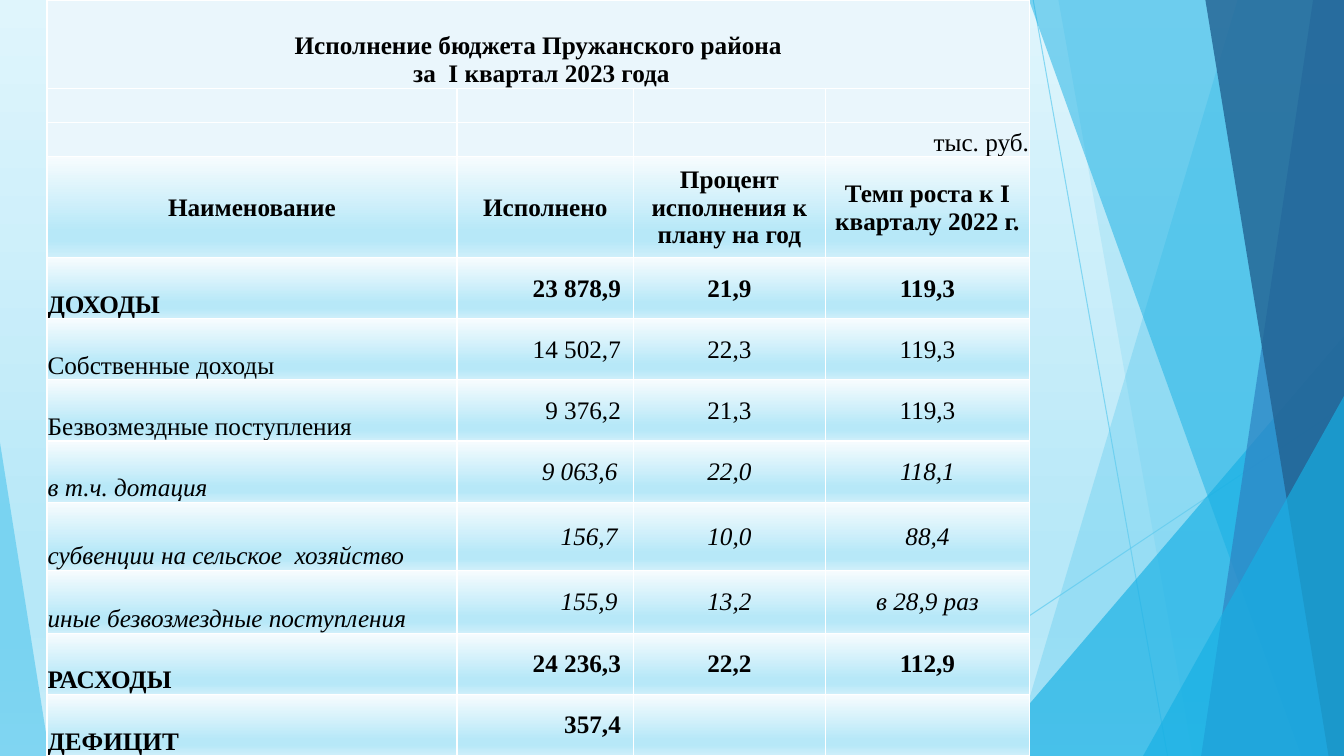
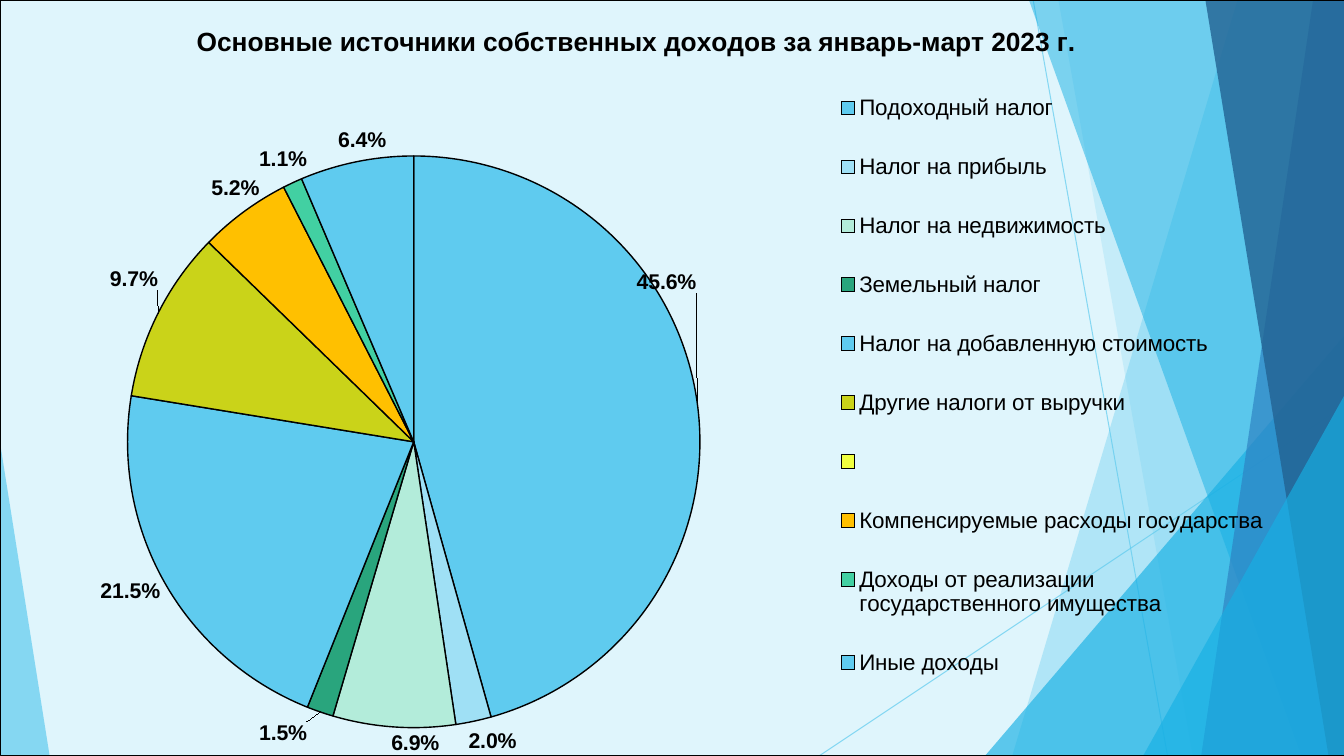
from copy import deepcopy

from lxml.etree import SubElement
from pptx import Presentation
from pptx.chart.data import CategoryChartData
from pptx.dml.color import RGBColor
from pptx.enum.chart import XL_CHART_TYPE, XL_LABEL_POSITION, XL_LEGEND_POSITION
from pptx.enum.shapes import MSO_CONNECTOR, MSO_SHAPE
from pptx.enum.text import MSO_ANCHOR, PP_ALIGN
from pptx.oxml import parse_xml
from pptx.oxml.ns import nsdecls, qn
from pptx.util import Pt

WIDTH, HEIGHT = 960, 540
BLACK, WHITE = "000000", "FFFFFF"
PALE, SKY, CYAN, BLUE, NAVY = "DFF5FC", "5FCBEF", "17B0E4", "2E83C3", "226292"
HEADING_FILL = "EAF6FC"
SHADE = [(74, "B7E8F8"), (83, "B7E8F8"), (100, "CFEFFA")]
SLIDE_GRADIENT = [(0, PALE)] + SHADE
CELL_GRADIENT = [(0, "F7FCFE")] + SHADE

LINES = [((738, 0), (834, HEIGHT)), ((WIDTH, 290), (585, HEIGHT))]
# Each facet runs from its top and bottom corner to the right edge: top, bottom, colour, opacity
BACK_FACETS = [(884, 723, SKY, 36), (756, 852, SKY, 20)]
FRONT_FACETS = [(735, 929.5, CYAN, 50), (938, 858, BLUE, 70), (861, 949, NAVY, 80)]

COLUMNS = [293, 126, 137, 146]
ROW_HEIGHTS = [63, 24.5, 24.5, 72] + [43.7] * 4 + [48.6, 45] + [43.7] * 2
HEADERS = ["Наименование", "Исполнено", "Процент исполнения к плану на год",
           "Темп роста к I кварталу 2022 г."]
BUDGET = [
    ("bold", "ДОХОДЫ", "23 878,9", "21,9", "119,3"),
    ("plain", "Собственные доходы", "14 502,7", "22,3", "119,3"),
    ("plain", "Безвозмездные поступления", "9 376,2", "21,3", "119,3"),
    ("italic", "в т.ч. дотация", "9 063,6", "22,0", "118,1"),
    ("italic", "субвенции на сельское  хозяйство", "156,7", "10,0", "88,4"),
    ("italic", "иные безвозмездные поступления", "155,9", "13,2", "в 28,9 раз"),
    ("bold", "РАСХОДЫ", "24 236,3", "22,2", "112,9"),
    ("bold", "ДЕФИЦИТ", "357,4", "", ""),
]
INCOME = [
    ("Подоходный налог", 45.6, SKY),
    ("Налог на прибыль", 2, "9FE0F5"),
    ("Налог на недвижимость", 6.9, "B3ECDA"),
    ("Земельный налог", 1.5, "29A57D"),
    ("Налог на добавленную стоимость", 21.5, SKY),
    ("Другие налоги от выручки", 9.7, "CAD319"),
    ("", None, "F1FF3F"),
    ("Компенсируемые расходы государства", 5.2, "FFC000"),
    ("Доходы от реализации государственного имущества", 1.1, "42D0A2"),
    ("Иные доходы", 6.4, SKY),
]
LABEL_SHIFTS = {0: (-47.5, -77.5), 1: (-4.5, 1.5), 2: (15.5, 1), 3: (-8, 3), 4: (0.5, -4),
                5: (3.5, -14), 7: (13.5, -5.5), 8: (12, -5), 9: (22, -3)}


def rgb(colour):
    return RGBColor.from_string(colour)


def set_opacity(shape, percent):
    for colour in shape.element.spPr.iter(qn("a:srgbClr")):
        SubElement(colour, qn("a:alpha"), val=str(percent * 1000))


def set_gradient(fill, stops):
    """Fill from top to bottom with (percent, colour) stops."""
    fill.gradient()
    fill.gradient_angle = 270
    stop_list = next(fill._xPr.iter(qn("a:gsLst")))
    for stop in list(stop_list):
        stop_list.remove(stop)
    for percent, colour in stops:
        stop = SubElement(stop_list, qn("a:gs"), pos=str(percent * 1000))
        SubElement(stop, qn("a:srgbClr"), val=colour)


def set_font(font, name, size, bold=False, italic=False):
    font.name, font.size = name, Pt(size)
    font.bold, font.italic = bold, italic
    font.color.rgb = rgb(BLACK)


def set_layout(element, index, box, **modes):
    """Place a part of the slide-sized chart; box is x, y and maybe w, h in points."""
    for old in element.findall(qn("c:layout")):
        element.remove(old)
    layout = parse_xml(f"<c:layout {nsdecls('c')}><c:manualLayout/></c:layout>")
    shares = [length / full for length, full in zip(box, (WIDTH, HEIGHT) * 2)]
    for name, value in {**modes, **dict(zip("xywh", shares))}.items():
        SubElement(layout[0], qn(f"c:{name}"), val=str(value))
    element.insert(index, layout)


class Deck:
    """Holds the shared style and the current slide."""

    table_font, chart_font = "Times New Roman", "Arial"

    def __init__(self):
        self.presentation = Presentation()
        self.presentation.slide_width = Pt(WIDTH)
        self.presentation.slide_height = Pt(HEIGHT)
        self.layout = self.presentation.slide_layouts[6]
        for placeholder in list(self.layout.placeholders):
            self.layout.shapes.element.remove(placeholder.element)
        self.slide = None

    def add_slide(self):
        self.slide = self.presentation.slides.add_slide(self.layout)

    def decorate_layout(self):
        """Draw the facets in a group and move it to the layout all slides share."""
        group = self.slide.shapes.add_group_shape()
        for start, end in LINES:
            self.line(group, start, end)
        for facet in BACK_FACETS:
            self.facet(group, *facet)
        self.triangle(group, 703.5, 240, 256.5, 1, CYAN, 66)
        for facet in FRONT_FACETS:
            self.facet(group, *facet)
        self.triangle(group, 816.5, 283, 143.5, 1, CYAN, 66)
        self.triangle(group, 0, 316, 35.5, 0, SKY, 70)
        self.layout.shapes.element.append(group.element)

    def line(self, group, start, end):
        points = [Pt(value) for value in start + end]
        connector = group.shapes.add_connector(MSO_CONNECTOR.STRAIGHT, *points)
        connector.line.color.rgb = rgb(SKY)
        connector.line.width = Pt(0.75)
        SubElement(connector.element.spPr, qn("a:effectLst"))
        set_opacity(connector, 70)

    def paint(self, shape, colour, opacity):
        shape.shadow.inherit = False
        shape.fill.solid()
        shape.fill.fore_color.rgb = rgb(colour)
        shape.line.fill.background()
        set_opacity(shape, opacity)

    def facet(self, group, top, bottom, colour, opacity):
        builder = group.shapes.build_freeform(Pt(top), 0)
        corners = [(WIDTH, 0), (WIDTH, HEIGHT), (bottom, HEIGHT)]
        builder.add_line_segments([(Pt(x), Pt(y)) for x, y in corners], close=True)
        self.paint(builder.convert_to_shape(), colour, opacity)

    def triangle(self, group, left, top, width, apex, colour, opacity):
        """Stand a triangle on the slide's bottom edge."""
        shape = group.shapes.add_shape(MSO_SHAPE.ISOSCELES_TRIANGLE, Pt(left), Pt(top),
                                       Pt(width), Pt(HEIGHT - top))
        shape.adjustments[0] = apex
        self.paint(shape, colour, opacity)

    def table(self, left, top, columns, rows):
        frame = self.slide.shapes.add_table(len(rows), len(columns), Pt(left), Pt(top),
                                            Pt(sum(columns)), Pt(sum(rows)))
        table = frame.table
        table.first_row = table.horz_banding = False
        for column, width in zip(table.columns, columns):
            column.width = Pt(width)
        for row, height in zip(table.rows, rows):
            row.height = Pt(height)
        return table

    def cell(self, cell, text, fill, align, style="plain", anchor=MSO_ANCHOR.MIDDLE,
             right=0.5):
        cell.margin_left = cell.margin_top = Pt(0.5)
        cell.margin_right, cell.margin_bottom = Pt(right), 0
        cell.vertical_anchor = anchor
        cell.text = text
        paragraph = cell.text_frame.paragraphs[0]
        paragraph.alignment = align
        set_font(paragraph.font, self.table_font, 18, style == "bold", style == "italic")
        properties = cell._tc.get_or_add_tcPr()
        for side in "LRTB":
            border = SubElement(properties, qn(f"a:ln{side}"), w=str(Pt(1)))
            solid = SubElement(border, qn("a:solidFill"))
            SubElement(solid, qn("a:srgbClr"), val=WHITE)
        if isinstance(fill, str):
            cell.fill.solid()
            cell.fill.fore_color.rgb = rgb(fill)
        else:
            set_gradient(cell.fill, fill)

    def pie(self, title, items):
        data = CategoryChartData()
        data.categories = [name for name, _, _ in items]
        data.add_series("Series 1", [value for _, value, _ in items])
        chart = self.slide.shapes.add_chart(XL_CHART_TYPE.PIE, 0, 0, Pt(WIDTH),
                                            Pt(HEIGHT), data).chart
        set_font(chart.font, self.chart_font, 15.5)
        self.chart_border(chart)
        edges = {"xMode": "edge", "yMode": "edge"}

        chart.has_title = True
        chart.chart_title.text_frame.text = title
        set_font(chart.chart_title.text_frame.paragraphs[0].font, self.chart_font, 18.8, True)
        set_layout(chart.chart_title._element, 1, (137, 13.5), **edges)

        chart.has_legend = True
        legend = chart.legend
        legend.position = XL_LEGEND_POSITION.RIGHT
        legend.include_in_layout = False
        set_font(legend.font, self.chart_font, 16)
        set_layout(legend._element, 1, (598, 43.5, 307, 464), **edges)

        plot = chart.plots[0]
        plot.vary_by_categories = True
        set_layout(plot._element.getparent(), 0, (90, 111.5, 411, 409),
                   layoutTarget="inner", **edges)
        series = plot.series[0]
        for index, (_, _, colour) in enumerate(items):
            point = series.points[index].format
            point.fill.solid()
            point.fill.fore_color.rgb = rgb(colour)
            point.line.color.rgb = rgb(BLACK)
            point.line.width = Pt(1)
        self.percent_labels(series)

    def chart_border(self, chart):
        border = parse_xml(
            f"<c:spPr {nsdecls('c', 'a')}><a:noFill/><a:ln w='{Pt(0.25)}'><a:solidFill>"
            f"<a:srgbClr val='{BLACK}'/></a:solidFill></a:ln></c:spPr>")
        chart._chartSpace.find(qn("c:txPr")).addprevious(border)

    def percent_labels(self, series):
        """Label all slices alike, then shift the labels that need room."""
        labels = series.data_labels
        labels.show_value, labels.show_percentage = False, True
        labels.number_format, labels.number_format_is_linked = "0.0%", False
        labels.position = XL_LABEL_POSITION.OUTSIDE_END
        set_font(labels.font, self.chart_font, 15.2, True)
        parent = labels._element
        shared = [child for child in parent if "eaderLines" not in child.tag]
        for position, (index, shift) in enumerate(LABEL_SHIFTS.items()):
            label = parse_xml(f"<c:dLbl {nsdecls('c')}><c:idx val='{index}'/></c:dLbl>")
            set_layout(label, 1, shift)
            label.extend([deepcopy(child) for child in shared])
            parent.insert(position, label)


def budget_slide(deck):
    deck.add_slide()
    deck.decorate_layout()
    set_gradient(deck.slide.background.fill, SLIDE_GRADIENT)
    table = deck.table(33.5, 0, COLUMNS, ROW_HEIGHTS)
    heading = "Исполнение бюджета Пружанского района\v за  I квартал 2023 года"
    top_rows = [[heading, "", "", ""], [""] * 4, ["", "", "", "тыс. руб."]]
    for row, texts in enumerate(top_rows):
        style, align = ("plain", PP_ALIGN.RIGHT) if row else ("bold", PP_ALIGN.CENTER)
        for column, text in enumerate(texts):
            deck.cell(table.cell(row, column), text, HEADING_FILL, align, style,
                      MSO_ANCHOR.BOTTOM)
    table.cell(0, 0).merge(table.cell(0, 3))
    for column, text in enumerate(HEADERS):
        deck.cell(table.cell(3, column), text, CELL_GRADIENT, PP_ALIGN.CENTER, "bold")
    for row, (style, name, amount, *rates) in enumerate(BUDGET, start=4):
        deck.cell(table.cell(row, 0), name, CELL_GRADIENT, PP_ALIGN.LEFT, style,
                  MSO_ANCHOR.BOTTOM)
        deck.cell(table.cell(row, 1), amount, CELL_GRADIENT, PP_ALIGN.RIGHT, style,
                  right=11.5 if style == "italic" else 9)
        for column, rate in enumerate(rates, start=2):
            deck.cell(table.cell(row, column), rate, CELL_GRADIENT, PP_ALIGN.CENTER, style)


def income_slide(deck):
    deck.add_slide()
    background = deck.slide.background.fill
    background.solid()
    background.fore_color.rgb = rgb(PALE)
    deck.pie("Основные источники собственных доходов за январь-март 2023 г.", INCOME)


def main():
    deck = Deck()
    budget_slide(deck)
    income_slide(deck)
    deck.presentation.save("out.pptx")


if __name__ == "__main__":
    main()
